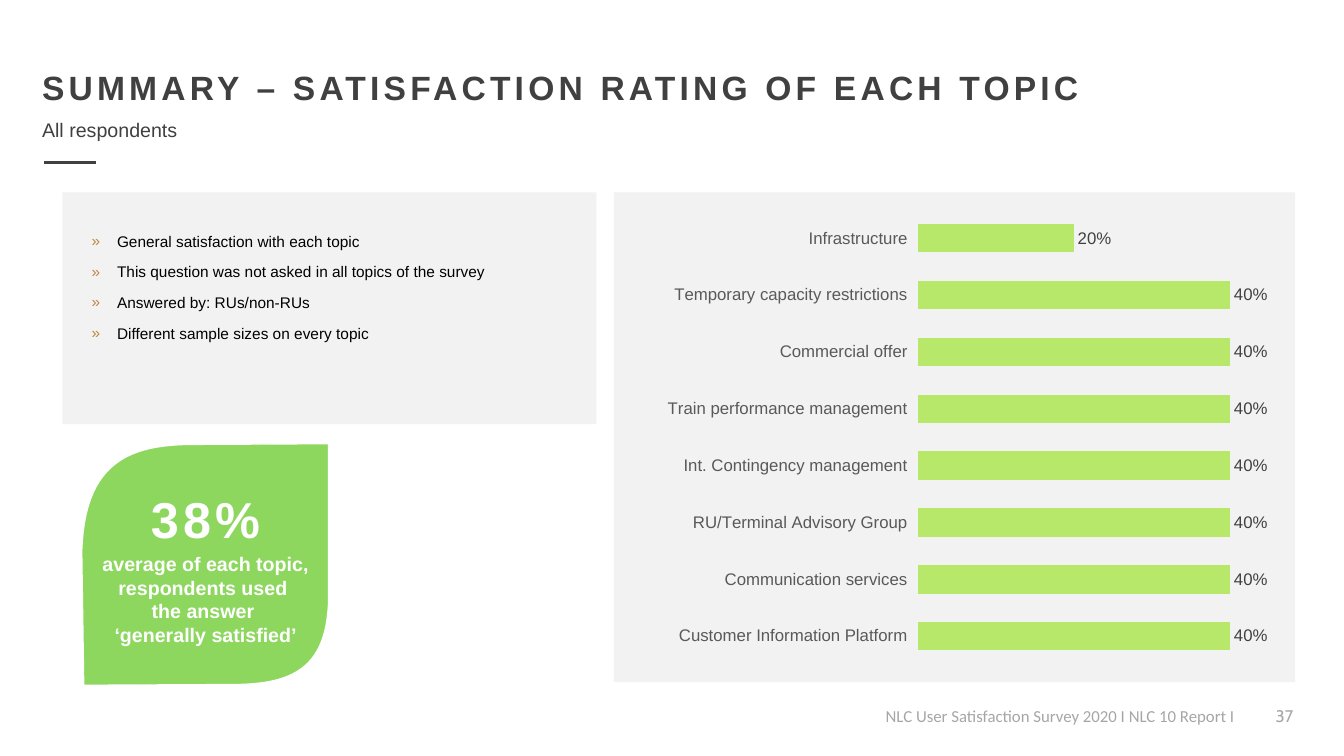
"""Build the satisfaction rating summary slide."""
from copy import deepcopy

from lxml.etree import SubElement
from pptx import Presentation
from pptx.chart.data import CategoryChartData
from pptx.dml.color import RGBColor
from pptx.enum.chart import XL_CHART_TYPE as ChartType, XL_LABEL_POSITION as LabelPosition
from pptx.enum.chart import XL_TICK_MARK as TickMark
from pptx.enum.shapes import MSO_CONNECTOR as Connector, MSO_SHAPE as Shape
from pptx.enum.text import PP_ALIGN as Align
from pptx.oxml.ns import qn
from pptx.util import Cm, Pt

WHITE = RGBColor(0xFF, 0xFF, 0xFF)
BLACK = RGBColor(0, 0, 0)
DARK = RGBColor(0x40, 0x40, 0x40)
MEDIUM = RGBColor(0x59, 0x59, 0x59)
LIGHT = RGBColor(0xA6, 0xA6, 0xA6)
PANEL = RGBColor(0xF2, 0xF2, 0xF2)
LEAF = RGBColor(0x8D, 0xD7, 0x5F)
BAR = RGBColor(0xB8, 0xE8, 0x6A)
BULLET = RGBColor(0xBF, 0x87, 0x3D)

PANELS = [(15.47, 4.85, 17.17, 12.34), (1.57, 4.85, 13.46, 5.84)]
RULE = (1.12, 4.09, 2.41, 4.09)

TEXTS = [
    ("37", (31.27, 17.65, 1.57, 1.02), True, Align.RIGHT, 0,
     {"name": "Cabin", "size": Pt(12)}, LIGHT),
    ("NLC User Satisfaction Survey 2020 I NLC 10 Report I", (22.07, 17.65, 9.78, 0.76),
     False, Align.LEFT, 0, {"name": "Calibri", "size": Pt(12)}, LIGHT),
    ("SUMMARY – SATISFACTION RATING OF EACH TOPIC", (0.81, 1.55, 29.64, 1.27),
     True, Align.LEFT, 3, {"name": "Arial", "size": Pt(24), "bold": True}, DARK),
    ("All respondents", (0.81, 2.84, 3.94, 0.86),
     False, Align.LEFT, 0, {"name": "Arial", "size": Pt(14)}, DARK),
    ("38%", (3.48, 12.17, 3.4, 1.8),
     False, Align.CENTER, 3, {"name": "Arial", "size": Pt(36), "bold": True}, WHITE),
    ("average of each topic, respondents used \nthe answer \n‘generally satisfied’",
     (2.06, 13.79, 6.25, 2.64),
     True, Align.CENTER, 0, {"name": "Arial", "size": Pt(14), "bold": True}, WHITE),
]

NOTES_BOX = (2.06, 5.77, 12.57, 4.32)
NOTES = [
    "General satisfaction with each topic",
    "This question was not asked in all topics of the survey",
    "Answered by: RUs/non-RUs",
    "Different sample sizes on every topic",
]
NOTE_FONT = {"name": "Arial", "size": Pt(11)}
NOTE_SPACING = {"line_spacing": 0.9, "space_before": Pt(10)}
NOTE_INDENT = Cm(0.64)

CHART_BOX = (16.48, 5.05, 15.82, 11.94)
PLOT_LAYOUT = {"x": 0.42, "y": 0.02, "w": 0.56, "h": 0.96}
RATINGS = {
    "Infrastructure": 0.2,
    "Temporary capacity restrictions": 0.4,
    "Commercial offer": 0.4,
    "Train performance management": 0.4,
    "Int. Contingency management": 0.4,
    "RU/Terminal Advisory Group": 0.4,
    "Communication services": 0.4,
    "Customer Information Platform": 0.4,
}
CHART_FONT = {"name": "Arial", "size": Pt(12)}

LEAF_START = (2.11, 17.27)
LEAF_PARTS = [
    [(2.06, 13.89)],
    [(2.13, 11.79), (3.1, 11.23), (4.72, 11.2)],
    [(8.28, 11.18)],
    [(8.28, 15.24)],
    [(8.2, 16.69), (7.54, 17.22), (6.02, 17.25)],
]
CURVE_STEPS = 24


def set_values(target, values):
    for name, value in values.items():
        setattr(target, name, value)


def set_font(font, values, color):
    set_values(font, values)
    font.color.rgb = color


def lengths(values):
    return [Cm(value) for value in values]


def add_text_frame(slide, box, wrap):
    frame = slide.shapes.add_textbox(*lengths(box)).text_frame
    frame.word_wrap = wrap
    return frame


def add_text(slide, text, box, wrap, alignment, tracking, font, color):
    paragraph = add_text_frame(slide, box, wrap).paragraphs[0]
    paragraph.text = text
    paragraph.alignment = alignment
    for run in paragraph.runs:
        set_font(run.font, font, color)
        if tracking:
            run.font._element.set("spc", str(tracking * 100))
    for line_break in paragraph._p.findall(qn("a:br")):
        line_break.append(deepcopy(paragraph.runs[0].font._element))


def add_notes(slide):
    frame = add_text_frame(slide, NOTES_BOX, True)
    for index, note in enumerate(NOTES):
        paragraph = frame.add_paragraph() if index else frame.paragraphs[0]
        paragraph.text = note
        set_values(paragraph, NOTE_SPACING)
        set_font(paragraph.runs[0].font, NOTE_FONT, BLACK)
        properties = paragraph._p.get_or_add_pPr()
        properties.set("marL", str(NOTE_INDENT))
        properties.set("indent", str(-NOTE_INDENT))
        bullet_color = SubElement(properties, qn("a:buClr"))
        SubElement(bullet_color, qn("a:srgbClr"), val=str(BULLET))
        SubElement(properties, qn("a:buFont"), typeface=NOTE_FONT["name"])
        SubElement(properties, qn("a:buChar"), char="»")


def add_panel(slide, box):
    panel = slide.shapes.add_shape(Shape.RECTANGLE, *lengths(box))
    panel.shadow.inherit = False
    panel.fill.solid()
    panel.fill.fore_color.rgb = PANEL
    panel.line.fill.background()


def add_rule(slide):
    rule = slide.shapes.add_connector(Connector.STRAIGHT, *lengths(RULE))
    rule.line.width = Pt(2)
    rule.line.color.rgb = DARK
    SubElement(rule._element.spPr, qn("a:effectLst"))


def curve_points(start, controls):
    corners = (start, *controls)
    for step in range(1, CURVE_STEPS + 1):
        t = step / CURVE_STEPS
        weights = ((1 - t) ** 3, 3 * t * (1 - t) ** 2, 3 * t * t * (1 - t), t ** 3)
        yield tuple(sum(w * corner[axis] for w, corner in zip(weights, corners))
                    for axis in (0, 1))


def add_leaf(slide):
    outline = [LEAF_START]
    for part in LEAF_PARTS:
        outline.extend(part if len(part) == 1 else curve_points(outline[-1], part))
    points = [lengths(point) for point in outline]
    builder = slide.shapes.build_freeform(*points[0])
    builder.add_line_segments(points[1:], close=True)
    leaf = builder.convert_to_shape()
    leaf.shadow.inherit = False
    leaf.fill.solid()
    leaf.fill.fore_color.rgb = LEAF
    leaf.line.color.rgb = WHITE
    leaf.line.width = Pt(1)


def add_ratings(slide):
    data = CategoryChartData(number_format="0%")
    data.categories = list(RATINGS)
    data.add_series("Series 1", list(RATINGS.values()))
    chart = slide.shapes.add_chart(ChartType.BAR_CLUSTERED, *lengths(CHART_BOX), data).chart
    set_values(chart, {"has_legend": False, "has_title": False})
    set_font(chart.font, {"name": "Arial", "size": Pt(10)}, BLACK)
    set_values(chart.value_axis, {"visible": False, "has_major_gridlines": False,
                                  "minimum_scale": 0, "maximum_scale": 0.45})
    topics = chart.category_axis
    set_values(topics, {"reverse_order": True, "major_tick_mark": TickMark.OUTSIDE})
    topics.format.line.fill.background()
    set_font(topics.tick_labels.font, CHART_FONT, MEDIUM)
    plot = chart.plots[0]
    set_values(plot, {"gap_width": 100, "vary_by_categories": False, "has_data_labels": True})
    set_values(plot.data_labels, {"show_value": True, "position": LabelPosition.OUTSIDE_END,
                                  "number_format": "0%", "number_format_is_linked": False})
    set_font(plot.data_labels.font, CHART_FONT, DARK)
    fill = plot.series[0].format.fill
    fill.solid()
    fill.fore_color.rgb = BAR
    area = chart._chartSpace.chart.plotArea
    for old_layout in area.findall(qn("c:layout")):
        area.remove(old_layout)
    layout = area.makeelement(qn("c:layout"))
    area.insert(0, layout)
    manual = SubElement(layout, qn("c:manualLayout"))
    settings = {"layoutTarget": "inner", "xMode": "edge", "yMode": "edge", **PLOT_LAYOUT}
    for name, value in settings.items():
        SubElement(manual, qn(f"c:{name}"), val=str(value))


def main():
    presentation = Presentation()
    set_values(presentation, {"slide_width": Cm(33.87), "slide_height": Cm(19.05)})
    slide = presentation.slides.add_slide(presentation.slide_layouts[6])
    for box in PANELS:
        add_panel(slide, box)
    add_rule(slide)
    add_ratings(slide)
    add_notes(slide)
    add_leaf(slide)
    for entry in TEXTS:
        add_text(slide, *entry)
    presentation.save("out.pptx")


if __name__ == "__main__":
    main()
